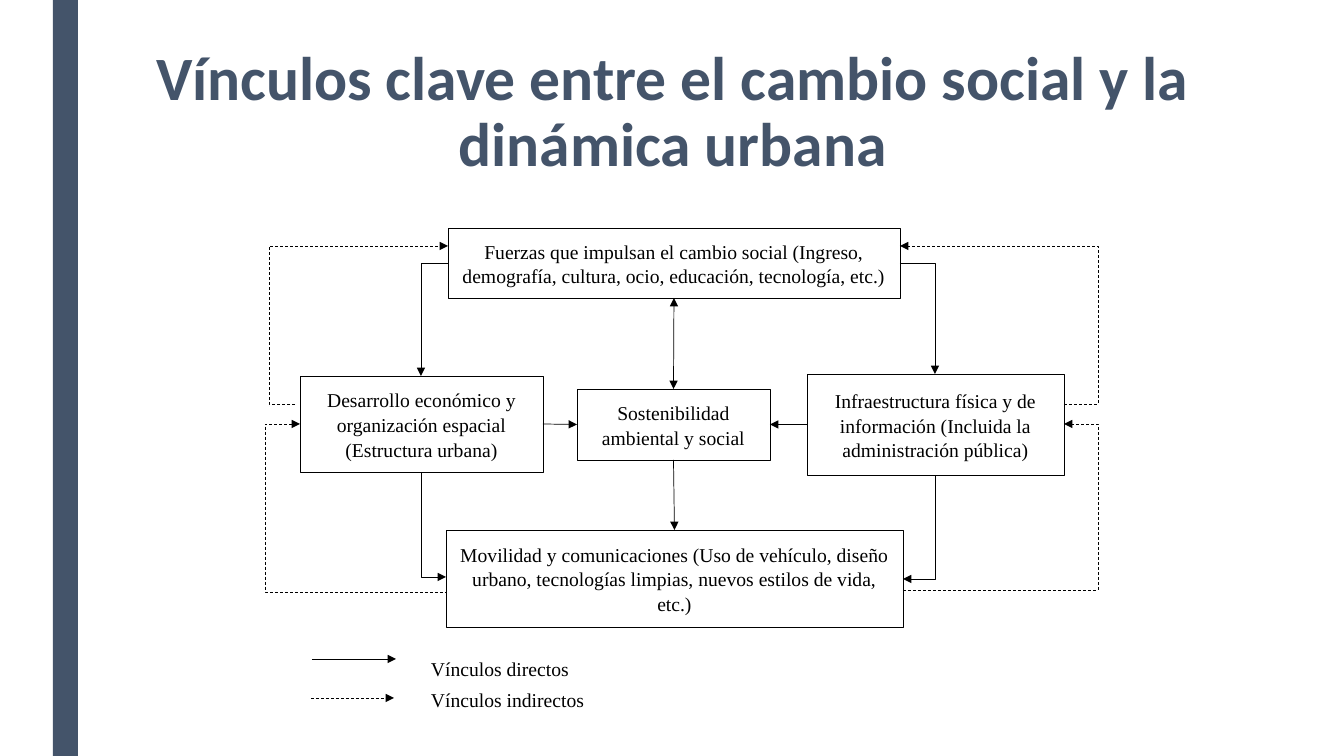
import pptx
import pptx.util
import pptx.dml.color
import pptx.enum.dml
import pptx.enum.shapes
import pptx.enum.text
import pptx.oxml.ns
from lxml import etree

PX = 914400 / 100.8  # EMU in one px
SLATE, BLACK, WHITE = "44546A", "000000", "FFFFFF"
ALIGN = pptx.enum.text.PP_ALIGN
ANCHOR = pptx.enum.text.MSO_ANCHOR
LINK = pptx.enum.shapes.MSO_CONNECTOR
TOP, LEFT, BOTTOM, RIGHT = range(4)


def px(*vals):
    return [pptx.util.Emu(round(v * PX)) for v in vals]


def color(code):
    return pptx.dml.color.RGBColor.from_string(code)


def tag(name):
    return pptx.oxml.ns.qn("a:" + name)


class Board:
    """Holds the style and the current slide."""

    font, size, thin, wire = "Times New Roman", 14, 0.25, 0.5

    def __init__(self, deck):
        self.slide = deck.slides.add_slide(deck.slide_layouts[5])
        self.shapes = self.slide.shapes

    def text(self, frame, words, align, space, after=0, font=None, size=None,
             ink=BLACK, bold=False):
        frame.word_wrap = True
        para = frame.paragraphs[0]
        para.alignment, para.line_spacing = align, space
        para.space_before = pptx.util.Pt(0)
        para.space_after = pptx.util.Pt(after)
        run = para.add_run()
        run.text = words
        run.font.name = font or self.font
        run.font.size = pptx.util.Pt(size or self.size)
        run.font.bold = bold
        run.font.color.rgb = color(ink)

    def title(self, words, x, y, w, h):
        head = self.shapes.title
        head.left, head.top, head.width, head.height = px(x, y, w, h)
        frame = head.text_frame
        frame.auto_size = pptx.enum.text.MSO_AUTO_SIZE.NONE
        frame.vertical_anchor = ANCHOR.TOP
        self.text(frame, words, ALIGN.CENTER, 0.89, font="Calibri", size=44,
                  ink=SLATE, bold=True)

    def rect(self, x, y, w, h, fill=WHITE, edge=None):
        kind = pptx.enum.shapes.MSO_SHAPE.RECTANGLE
        shape = self.shapes.add_shape(kind, *px(x, y, w, h))
        shape.shadow.inherit = False
        shape.fill.solid()
        shape.fill.fore_color.rgb = color(fill)
        if edge:
            shape.line.color.rgb = color(edge)
            shape.line.width = pptx.util.Pt(self.thin)
        else:
            shape.line.fill.background()
        return shape

    def box(self, words, x, y, w, h, after=0):
        shape = self.rect(x, y, w, h, edge=BLACK)
        shape.text_frame.vertical_anchor = ANCHOR.MIDDLE
        self.text(shape.text_frame, words, ALIGN.CENTER, 1.06, after)
        return shape

    def label(self, words, x, y, w, h, space):
        frame = self.rect(x, y, w, h).text_frame
        frame.vertical_anchor = ANCHOR.TOP
        self.text(frame, words, ALIGN.JUSTIFY, space, 8)

    def wired(self, kind, start, end, ends, dash):
        link = self.shapes.add_connector(kind, *px(*start, *end))
        link.line.color.rgb = color(BLACK)
        link.line.width = pptx.util.Pt(self.wire)
        if dash:
            link.line.dash_style = pptx.enum.dml.MSO_LINE.DASH
        props = link._element.spPr
        line = props.find(tag("ln"))
        for name in ends:
            etree.SubElement(line, tag(name), type="triangle")
        etree.SubElement(props, tag("effectLst"))
        return link

    def arrow(self, start, end, dash=False):
        self.wired(LINK.STRAIGHT, start, end, ["tailEnd"], dash)

    def join(self, one, side, two, face, ends=("tailEnd",)):
        link = self.wired(LINK.STRAIGHT, (0, 0), (1, 1), ends, False)
        link.begin_connect(one, side)
        link.end_connect(two, face)

    def elbow(self, start, end, turns=(), dash=False, ends=("tailEnd",)):
        """Leaves sideways; turns are the x, then y, of the inner legs."""
        link = self.wired(LINK.ELBOW, start, end, ends, dash)
        geom = link._element.spPr.find(tag("prstGeom"))
        geom.set("prst", f"bentConnector{len(turns) + 2}")
        guides = geom.find(tag("avLst"))
        for i, turn in enumerate(turns):
            part = (turn - start[i]) / (end[i] - start[i])
            etree.SubElement(guides, tag("gd"), name=f"adj{i + 1}",
                             fmla=f"val {round(part * 100000)}")


def main():
    deck = pptx.Presentation()
    deck.slide_width, deck.slide_height = px(1344, 756)
    board = Board(deck)

    # Side band and title
    board.rect(53, 0, 25, 756, SLATE)
    board.title("Vínculos clave entre el cambio social y la dinámica urbana",
                144, 43, 1058, 163)

    # Boxes
    forces = board.box("Fuerzas que impulsan el cambio social (Ingreso, "
                       "demografía, cultura, ocio, educación, tecnología, etc.)",
                       448, 228, 452, 70)
    travel = board.box("Movilidad y comunicaciones (Uso de vehículo, diseño "
                       "urbano, tecnologías limpias, nuevos estilos de vida, etc.)",
                       446, 530, 457, 97)
    infra = board.box("Infraestructura física y de información "
                      "(Incluida la administración pública)", 807, 374, 257, 101)
    growth = board.box("Desarrollo económico y organización espacial "
                       "(Estructura urbana)", 300, 376, 243, 96)
    core = board.box("Sostenibilidad ambiental y social",
                     577, 389, 193, 71, after=8)

    # Straight links around the centre
    board.join(forces, BOTTOM, core, TOP, ("headEnd", "tailEnd"))
    board.join(core, BOTTOM, travel, TOP)
    board.join(growth, RIGHT, core, LEFT)
    board.join(infra, LEFT, core, RIGHT)

    # Direct bent links
    board.elbow((448, 263), (421, 376))
    board.elbow((900, 263), (935, 374))
    board.elbow((903, 579), (935, 475), ends=["headEnd"])
    board.elbow((446, 577), (421, 472), ends=["headEnd"])

    # Indirect bent links
    board.elbow((903, 590), (1064, 424), [1098], dash=True)
    board.elbow((1064, 404), (900, 246), [1098], dash=True)
    board.elbow((295, 404), (448, 246), [269], dash=True)
    board.elbow((300, 424), (446, 609), [265, 592], dash=True, ends=["headEnd"])

    # Legend
    board.arrow((312, 659), (396, 659))
    board.arrow((311, 698), (394, 698), dash=True)
    board.label("Vínculos directos", 421, 640, 208, 36, 1.5)
    board.label("Vínculos indirectos", 421, 682, 208, 36, 1.06)

    deck.save("out.pptx")


if __name__ == "__main__":
    main()
